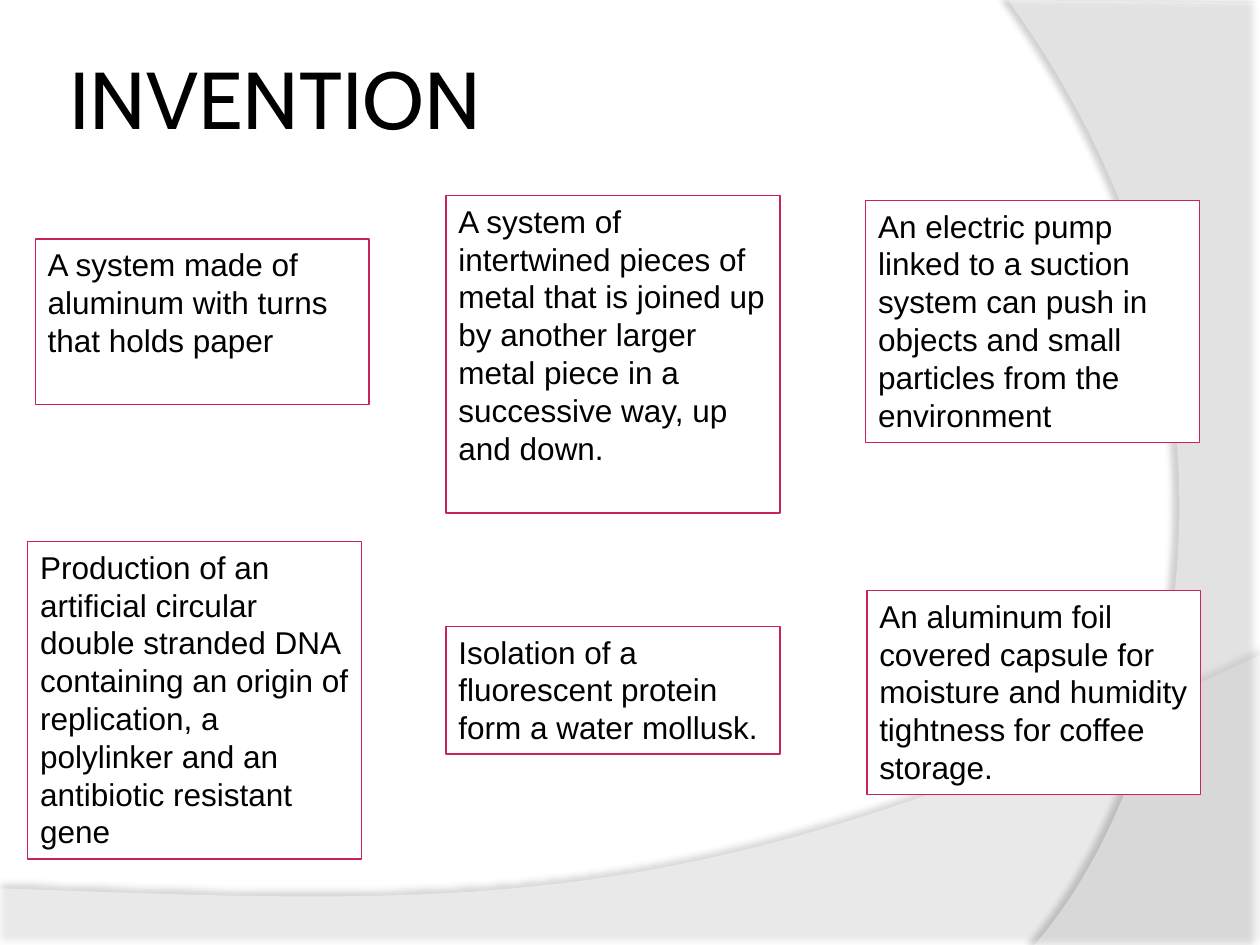
"""Build the INVENTION slide: six described inventions over two translucent waves."""
import pptx
import pptx.dml.color
import pptx.enum.text
import pptx.oxml.ns
import pptx.util
from lxml import etree

qn = pptx.oxml.ns.qn


def rgb(value):
    return pptx.dml.color.RGBColor.from_string(value)


def add_wave(shapes, corners, controls, alpha, shade, distance, direction):
    (x0, y0), (x3, y3) = corners[-1], controls[-1]
    (x1, y1), (x2, y2) = controls[:2]
    curve = []
    for i in range(1, 61):
        t = i / 60
        a, b, c, d = (1 - t) ** 3, 3 * t * (1 - t) ** 2, 3 * t * t * (1 - t), t ** 3
        curve.append((a * x0 + b * x1 + c * x2 + d * x3, a * y0 + b * y1 + c * y2 + d * y3))
    points = [(x * W, y * H) for x, y in corners + curve]
    builder = shapes.build_freeform(*points[0])
    builder.add_line_segments(points[1:], close=True)
    sp = builder.convert_to_shape()
    sp.fill.solid()
    sp.fill.fore_color.rgb = rgb("FFFFFF")
    sp.line.fill.background()
    sp.shadow.inherit = False
    props = sp.element.spPr
    color = props.find(qn("a:solidFill")).find(qn("a:srgbClr"))
    etree.SubElement(color, qn("a:alpha"), val=str(alpha * 1000))
    shadow = etree.SubElement(
        props.find(qn("a:effectLst")), qn("a:outerShdw"),
        blurRad=str(pptx.util.Pt(4)), dist=str(pptx.util.Pt(distance)),
        dir=str(direction * 60000), algn="ctr", rotWithShape="0")
    color = etree.SubElement(shadow, qn("a:srgbClr"), val="000000")
    etree.SubElement(color, qn("a:alpha"), val=str(shade * 1000))


prs = pptx.Presentation()
prs.slide_width = W = pptx.util.Inches(10)
prs.slide_height = H = pptx.util.Inches(7.5)
s = prs.slides.add_slide(prs.slide_layouts[5])

add_wave(s.shapes, [(0, 0.94), (0, 1), (1, 1), (1, 0.693)],
         [(0.559, 0.972), (0.391, 0.959), (0, 0.94)], 45, 35, 3.5, 270)
add_wave(s.shapes, [(1, 0.003), (1, 1), (0.821, 1)],
         [(0.935, 0.825), (1.018, 0.4), (0.8, 0)], 40, 45, 4, 180)

title = s.shapes.title
title.left, title.top = int(0.05 * W), int(0.019 * H)
title.width, title.height = int(0.817 * W), int(0.167 * H)
tf = title.text_frame
tf.margin_left = tf.margin_right = tf.margin_top = tf.margin_bottom = pptx.util.Inches(0.05)
tf.vertical_anchor = pptx.enum.text.MSO_ANCHOR.MIDDLE
p = tf.paragraphs[0]
p.alignment = pptx.enum.text.PP_ALIGN.LEFT
r = p.add_run()
r.text = "INVENTION"
r.font.name = "Cabin"
r.font.size = pptx.util.Pt(46)
r.font.color.rgb = rgb("000000")
s.shapes.element.append(title.element)

inventions = [
    (0.354, 0.207, 0.336, "A system of intertwined pieces of metal that is joined up by "
     "another larger metal piece in a successive way, up and down."),
    (0.028, 0.253, 0.175, "A system made of aluminum with turns that holds paper"),
    (0.687, 0.212, 0.256, "An electric pump linked to a suction system can push in objects "
     "and small particles from the environment"),
    (0.022, 0.573, 0.336, "Production of an artificial circular double stranded DNA containing "
     "an origin of replication, a polylinker and an antibiotic resistant gene"),
    (0.354, 0.663, 0.135, "Isolation of a fluorescent protein form a water mollusk."),
    (0.688, 0.625, 0.216, "An aluminum foil covered capsule for moisture and humidity "
     "tightness for coffee storage."),
]
for left, top, height, text in inventions:
    sp = s.shapes.add_shape(
        pptx.enum.shapes.MSO_SHAPE.RECTANGLE,
        int(left * W), int(top * H), int(0.265 * W), int(height * H))
    sp.shadow.inherit = False
    sp.fill.solid()
    sp.fill.fore_color.rgb = rgb("FFFFFF")
    sp.line.color.rgb = rgb("C82556")
    sp.line.width = pptx.util.Pt(0.75)
    tf = sp.text_frame
    tf.word_wrap = True
    tf.vertical_anchor = pptx.enum.text.MSO_ANCHOR.TOP
    p = tf.paragraphs[0]
    p.alignment = pptx.enum.text.PP_ALIGN.LEFT
    r = p.add_run()
    r.text = text
    r.font.name = "Arial"
    r.font.size = pptx.util.Pt(18)
    r.font.color.rgb = rgb("000000")

prs.save("out.pptx")
